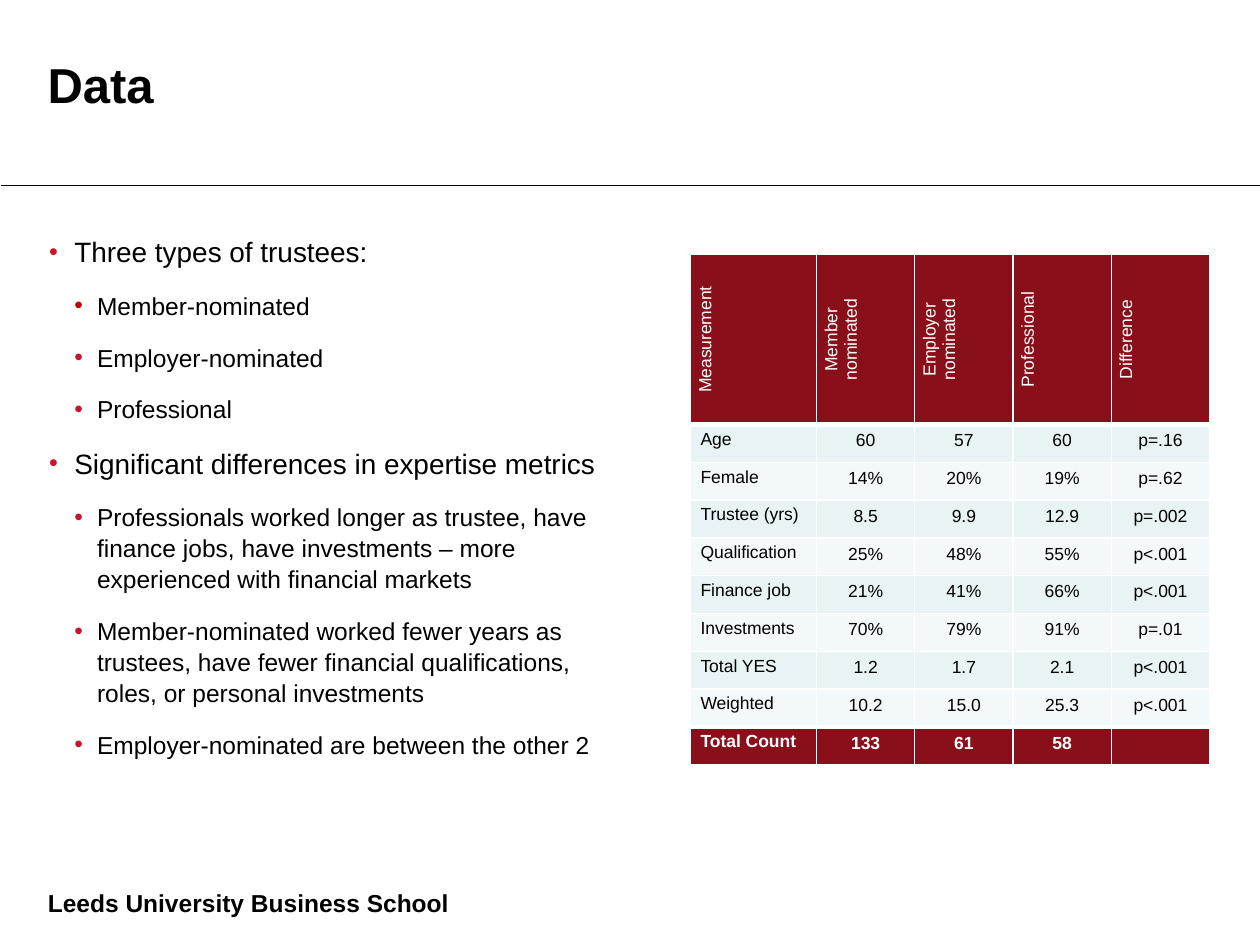
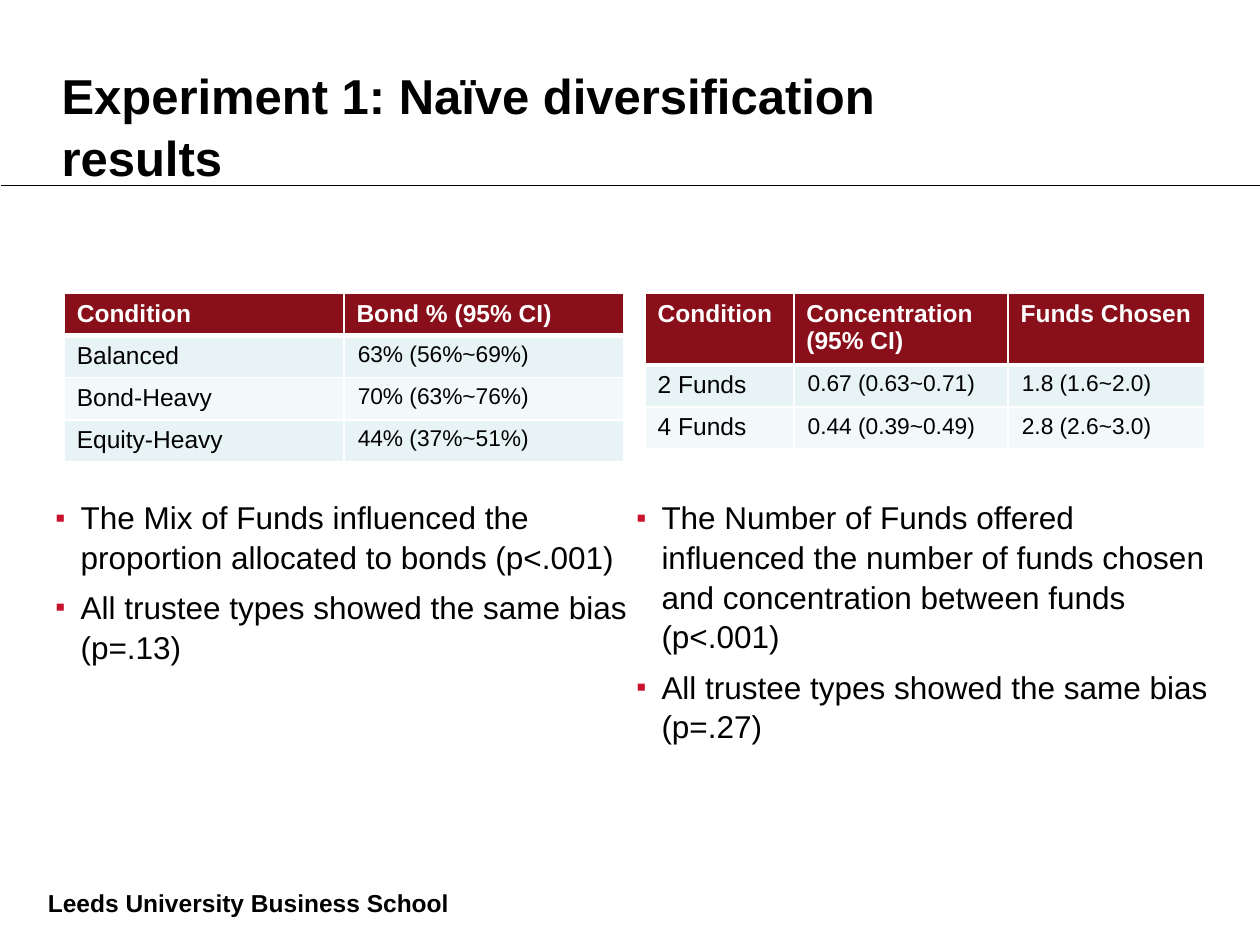
from dataclasses import dataclass
from typing import Optional

from lxml import etree
from pptx import Presentation
from pptx.dml.color import RGBColor
from pptx.enum.shapes import MSO_CONNECTOR
from pptx.enum.text import MSO_ANCHOR, PP_ALIGN
from pptx.oxml.ns import qn
from pptx.util import Inches, Pt

STRAIGHT = MSO_CONNECTOR.STRAIGHT
TOP, BOTTOM = MSO_ANCHOR.TOP, MSO_ANCHOR.BOTTOM
LEFT, CENTER = PP_ALIGN.LEFT, PP_ALIGN.CENTER

FONT = "Arial"
BLACK, WHITE = "000000", "FFFFFF"
CRIMSON, BULLET_RED, DARK_RED = "890F1A", "C9122B", "C00000"
BANDS = ("E7F3F4", "F3F9FA")
LINE_SPACING = 1.05
THIN, THICK = 1, 3
VALUE_MARGINS = (0.11, 0.05)


@dataclass(frozen=True)
class Bullet:
    text: str
    size: int
    level: int = 0
    mark: str = "•"
    colour: str = BULLET_RED


@dataclass(frozen=True)
class ResultTable:
    left: float
    top: float
    column_widths: tuple[float, ...]
    header_height: float
    row_height: float
    rows: list[tuple[str, ...]]
    label_size: int
    value_size: int
    label_margins: tuple[float, float] = (0.1, 0.05)
    value_align: PP_ALIGN = LEFT
    rotated_header: bool = False
    has_total: bool = False


def rgb(colour: str) -> RGBColor:
    return RGBColor.from_string(colour)


def format_runs(paragraph, size: float, colour: str = BLACK, bold: bool = False) -> None:
    for run in paragraph.runs:
        run.font.name = FONT
        run.font.size = Pt(size)
        run.font.bold = bold
        run.font.color.rgb = rgb(colour)


def add_text_frame(slide, left: float, top: float, width: float, height: float,
                   margins: tuple[float, float, float, float], anchor=TOP):
    """Add a wrapping text box; margins run left, top, right, bottom."""
    box = slide.shapes.add_textbox(Inches(left), Inches(top), Inches(width), Inches(height))
    frame = box.text_frame
    frame.word_wrap = True
    frame.vertical_anchor = anchor
    (frame.margin_left, frame.margin_top,
     frame.margin_right, frame.margin_bottom) = map(Inches, margins)
    return frame


def add_base_slide(deck):
    """Add a blank slide with the header rule and the footer."""
    slide = deck.slides.add_slide(deck.slide_layouts[6])
    rule = slide.shapes.add_connector(STRAIGHT, Inches(0.01), Inches(1.47),
                                      Inches(10.01), Inches(1.47))
    rule.line.color.rgb = rgb(BLACK)
    rule.line.width = Pt(0.75)
    etree.SubElement(rule.element.spPr, qn("a:effectLst"))
    footer = add_text_frame(slide, 0.38, 6.51, 5.33, 0.81, (0, 0, 0, 0.04), BOTTOM)
    footer.text = "Leeds University Business School"
    format_runs(footer.paragraphs[0], 14, bold=True)
    return slide


def add_title(slide, text: str, left: float, top: float, width: float, height: float) -> None:
    title = add_text_frame(slide, left, top, width, height, (0.1, 0.05, 0.1, 0.05))
    title.text = text
    title.paragraphs[0].line_spacing = LINE_SPACING
    format_runs(title.paragraphs[0], 28, bold=True)


def set_bullet(paragraph, bullet: Bullet) -> None:
    indent, hanging = ((0.2, 0.2), (0.38, 0.18))[bullet.level]
    properties = paragraph._p.get_or_add_pPr()
    properties.set("marL", str(Inches(indent)))
    properties.set("indent", str(-Inches(hanging)))
    colour = etree.SubElement(properties, qn("a:buClr"))
    etree.SubElement(colour, qn("a:srgbClr"), val=bullet.colour)
    if bullet.level == 0:
        etree.SubElement(properties, qn("a:buSzPct"), val="90000")
    etree.SubElement(properties, qn("a:buFont"), typeface=FONT)
    etree.SubElement(properties, qn("a:buChar"), char=bullet.mark)


def add_bullets(slide, bullets: list[Bullet], left: float, top: float,
                height: float, space_after: float) -> None:
    frame = add_text_frame(slide, left, top, 4.61, height, (0, 0, 0, 0))
    frame.text = "\n".join(bullet.text for bullet in bullets)
    for paragraph, bullet in zip(frame.paragraphs, bullets):
        set_bullet(paragraph, bullet)
        paragraph.level = bullet.level
        paragraph.line_spacing = LINE_SPACING
        paragraph.space_after = Pt(space_after)
        format_runs(paragraph, bullet.size)


def set_borders(cell, top: float, bottom: float) -> None:
    properties = cell._tc.get_or_add_tcPr()
    for side, width in (("L", THIN), ("R", THIN), ("T", top), ("B", bottom)):
        border = etree.SubElement(properties, qn(f"a:ln{side}"), w=str(Pt(width)))
        fill = etree.SubElement(border, qn("a:solidFill"))
        etree.SubElement(fill, qn("a:srgbClr"), val=WHITE)


def fill_cell(cell, text: str, size: float, colour: str, bold: bool, align,
              margins: tuple[float, float], background: str) -> None:
    cell.margin_left = cell.margin_right = Inches(margins[0])
    cell.margin_top = cell.margin_bottom = Inches(margins[1])
    cell.fill.solid()
    cell.fill.fore_color.rgb = rgb(background)
    cell.text_frame.text = text
    for paragraph in cell.text_frame.paragraphs:
        paragraph.alignment = align
        format_runs(paragraph, size, colour, bold)
        if not text:
            etree.SubElement(paragraph._p, qn("a:endParaRPr"), sz=str(size * 100))


def add_result_table(slide, spec: ResultTable) -> None:
    row_count = len(spec.rows)
    heights = [spec.header_height] + [spec.row_height] * (row_count - 1)
    table = slide.shapes.add_table(
        row_count, len(spec.column_widths), Inches(spec.left), Inches(spec.top),
        Inches(sum(spec.column_widths)), Inches(sum(heights))).table
    table.horz_banding = False
    for column, width in zip(table.columns, spec.column_widths):
        column.width = Inches(width)
    total_index: Optional[int] = row_count - 1 if spec.has_total else None
    for r, values in enumerate(spec.rows):
        table.rows[r].height = Inches(heights[r])
        is_header, is_total = r == 0, r == total_index
        strong = is_header or is_total
        top = THICK if r == 1 or is_total else THIN
        bottom = THICK if is_header or r + 1 == total_index else THIN
        for c, text in enumerate(values):
            cell = table.cell(r, c)
            is_label = is_header or c == 0
            set_borders(cell, top, bottom)
            rotated = is_header and spec.rotated_header
            if rotated:
                cell._tc.get_or_add_tcPr().set("vert", "vert270")
            fill_cell(
                cell, text,
                size=spec.label_size if is_label else spec.value_size,
                colour=WHITE if strong else BLACK,
                bold=strong and not rotated,
                align=CENTER if rotated else LEFT if is_label else spec.value_align,
                margins=spec.label_margins if is_label else VALUE_MARGINS,
                background=CRIMSON if strong else BANDS[(r - 1) % 2])


TRUSTEE_BULLETS = [
    Bullet("Three types of trustees:", 16),
    Bullet("Member-nominated", 14, 1, colour=DARK_RED),
    Bullet("Employer-nominated", 14, 1),
    Bullet("Professional", 14, 1),
    Bullet("Significant differences in expertise metrics", 16),
    Bullet("Professionals worked longer as trustee, have finance jobs, have investments "
           "– more experienced with financial markets", 14, 1),
    Bullet("Member-nominated worked fewer years as trustees, have fewer financial "
           "qualifications, roles, or personal investments", 14, 1),
    Bullet("Employer-nominated are between the other 2", 14, 1),
]

TRUSTEE_TABLE = ResultTable(
    5.48, 2.02, (1, 0.78, 0.78, 0.78, 0.78), 1.06, 0.3,
    [
        ("Measurement", "Member nominated", "Employer nominated", "Professional", "Difference"),
        ("Age", "60", "57", "60", "p=.16"),
        ("Female", "14%", "20%", "19%", "p=.62"),
        ("Trustee (yrs)", "8.5", "9.9", "12.9", "p=.002"),
        ("Qualification", "25%", "48%", "55%", "p<.001"),
        ("Finance job", "21%", "41%", "66%", "p<.001"),
        ("Investments", "70%", "79%", "91%", "p=.01"),
        ("Total YES", "1.2", "1.7", "2.1", "p<.001"),
        ("Weighted", "10.2", "15.0", "25.3", "p<.001"),
        ("Total Count", "133", "61", "58", ""),
    ],
    label_size=10, value_size=10, label_margins=(0.08, 0.04),
    value_align=CENTER, rotated_header=True, has_total=True)

MIX_TABLE = ResultTable(
    0.51, 2.33, (2.22, 2.22), 0.33, 0.33,
    [
        ("Condition", "Bond % (95% CI)"),
        ("Balanced", "63% (56%~69%)"),
        ("Bond-Heavy", "70% (63%~76%)"),
        ("Equity-Heavy", "44% (37%~51%)"),
    ],
    label_size=14, value_size=13)

NUMBER_TABLE = ResultTable(
    5.12, 2.33, (1.18, 1.7, 1.56), 0.56, 0.33,
    [
        ("Condition", "Concentration\n(95% CI)", "Funds Chosen"),
        ("2 Funds", "0.67 (0.63~0.71)", "1.8 (1.6~2.0)"),
        ("4 Funds", "0.44 (0.39~0.49)", "2.8 (2.6~3.0)"),
    ],
    label_size=14, value_size=13)

MIX_FINDINGS = (
    "The Mix of Funds influenced the proportion allocated to bonds (p<.001)",
    "All trustee types showed the same bias (p=.13)",
)
NUMBER_FINDINGS = (
    "The Number of Funds offered influenced the number of funds chosen and "
    "concentration between funds (p<.001)",
    "All trustee types showed the same bias (p=.27)",
)


def build_data_slide(deck) -> None:
    slide = add_base_slide(deck)
    add_title(slide, "Data", 0.28, 0.36, 6.3, 0.57)
    add_bullets(slide, TRUSTEE_BULLETS, 0.39, 1.85, 3.94, space_after=12)
    add_result_table(slide, TRUSTEE_TABLE)


def build_experiment_slide(deck) -> None:
    slide = add_base_slide(deck)
    add_result_table(slide, MIX_TABLE)
    add_result_table(slide, NUMBER_TABLE)
    for left, findings in ((0.44, MIX_FINDINGS), (5.05, NUMBER_FINDINGS)):
        bullets = [Bullet(finding, 18, mark="▪") for finding in findings]
        add_bullets(slide, bullets, left, 3.94, 2.33, space_after=6)
    add_title(slide, "Experiment 1: Naïve diversification\vresults", 0.39, 0.45, 9.22, 0.71)


def main() -> None:
    deck = Presentation()
    deck.slide_width, deck.slide_height = Inches(10), Inches(7.5)
    build_data_slide(deck)
    build_experiment_slide(deck)
    deck.save("out.pptx")


if __name__ == "__main__":
    main()
